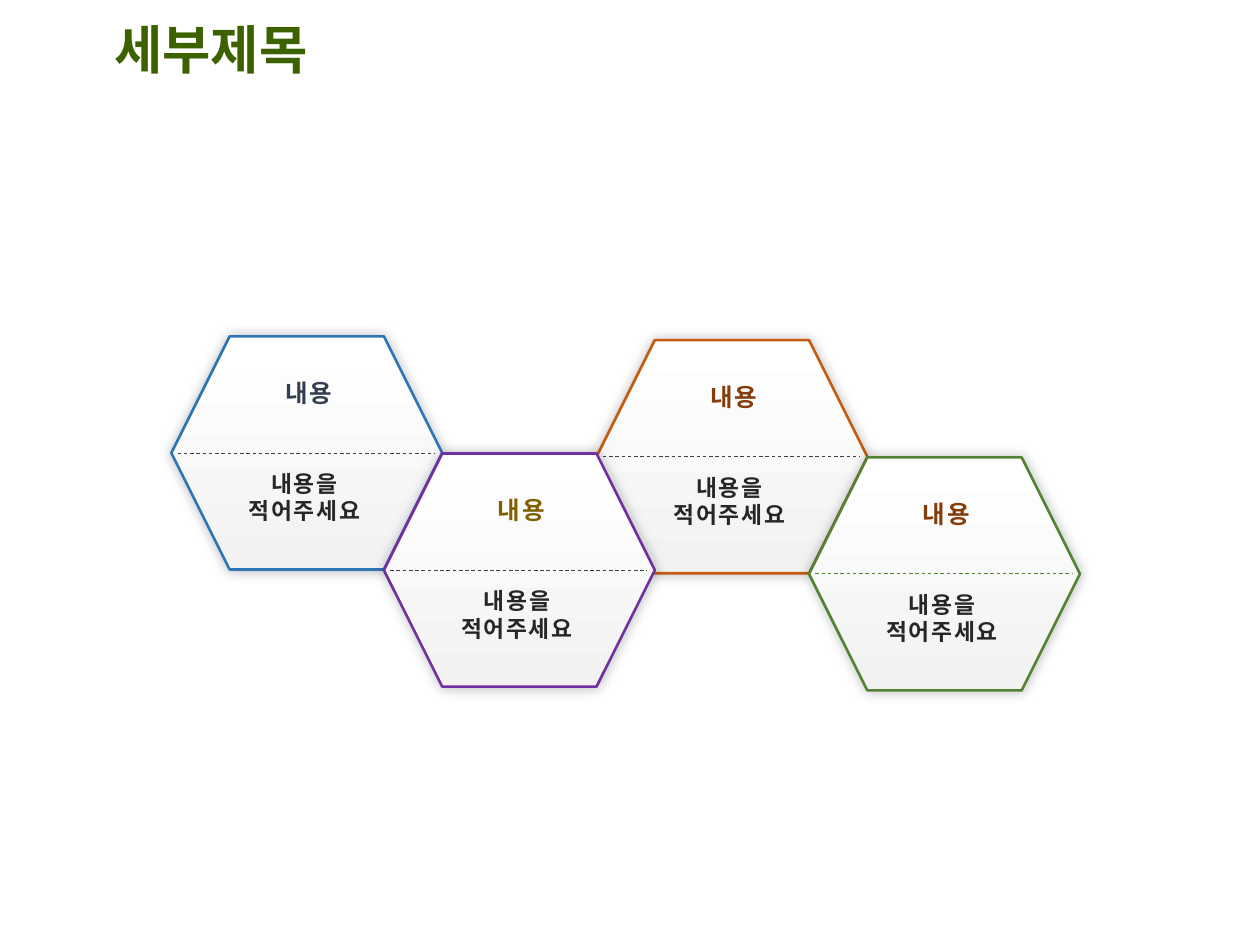
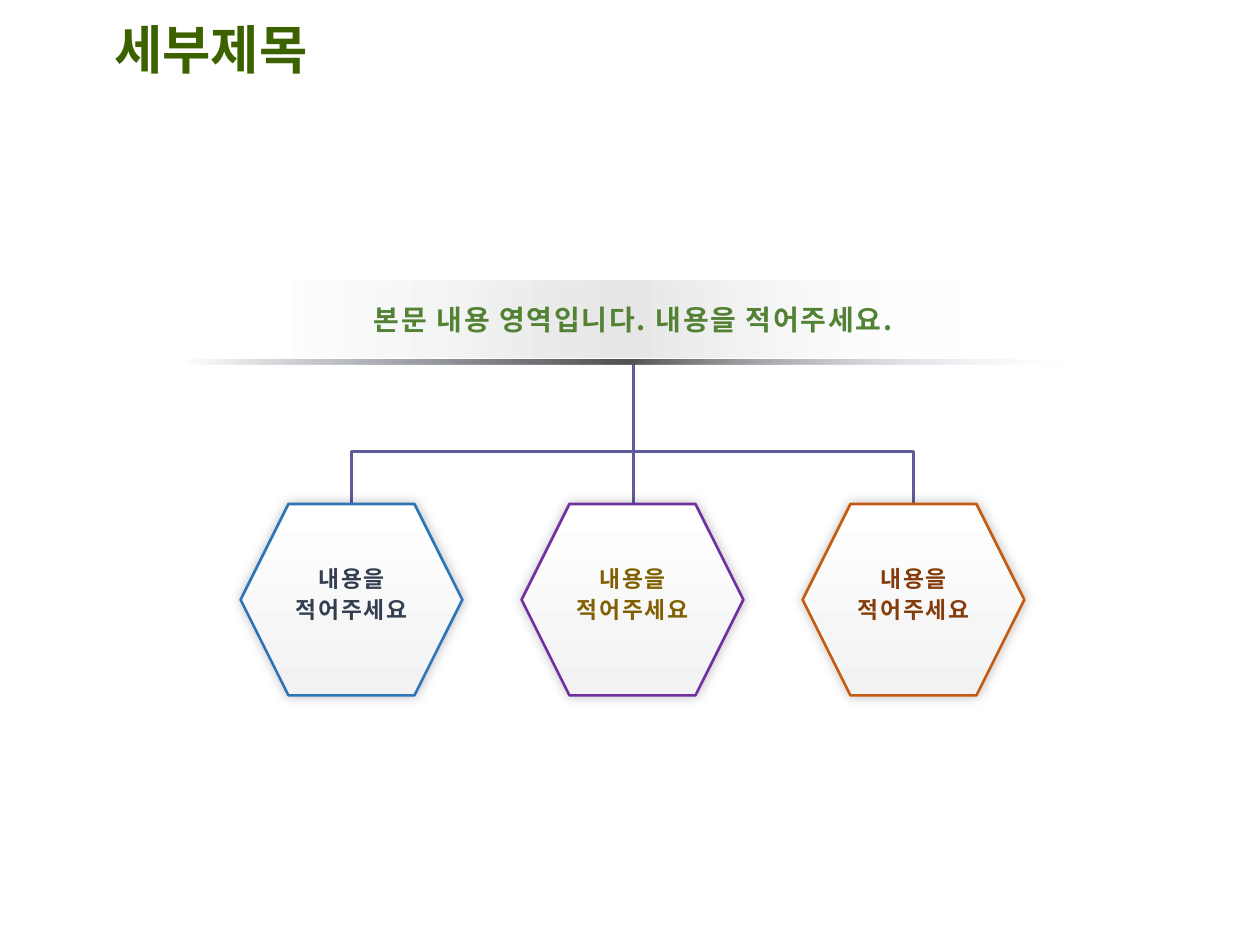
"""Build two slides of hexagon diagrams, placed by percentages of the slide's size."""
from dataclasses import dataclass

from lxml import etree
from pptx import Presentation
from pptx.dml.color import RGBColor
from pptx.enum.dml import MSO_LINE
from pptx.enum.shapes import MSO_CONNECTOR, MSO_SHAPE
from pptx.enum.text import MSO_ANCHOR, PP_ALIGN
from pptx.oxml.ns import qn
from pptx.util import Emu, Inches, Pt

HEXAGON, RECTANGLE = MSO_SHAPE.HEXAGON, MSO_SHAPE.RECTANGLE
STRAIGHT, ELBOW = MSO_CONNECTOR.STRAIGHT, MSO_CONNECTOR.ELBOW
LEFT, CENTER = PP_ALIGN.LEFT, PP_ALIGN.CENTER
TOP, MIDDLE = MSO_ANCHOR.TOP, MSO_ANCHOR.MIDDLE
DASH = MSO_LINE.DASH

SLIDE_WIDTH, SLIDE_HEIGHT = Inches(10), Inches(7.5)
HANGUL_FONT = "Noto Sans CJK KR"
BLUE, PURPLE, ORANGE, GREEN = "2E75B6", "7030A0", "C55A11", "548235"
NAVY, OLIVE, BROWN = "333F50", "806000", "843C0B"
TITLE_GREEN, INK, GRAY, TREE = "3C6200", "262626", "404040", "5E5D99"
PROMPT = ["내용을", "적어주세요"]


@dataclass(frozen=True)
class Box:
    """Place and size in percent of the slide's width and height."""
    left: float
    top: float
    width: float
    height: float

    def inner(self, left: float, top: float, width: float, height: float) -> "Box":
        """Return a box offset from this one."""
        return Box(self.left + left, self.top + top, width, height)


@dataclass(frozen=True)
class TextStyle:
    """Look of a text block."""
    size: float
    spacing: float
    font: str = HANGUL_FONT
    align: int = CENTER
    anchor: int = TOP
    tracking: int = 100


@dataclass(frozen=True)
class Stop:
    """Gradient stop, with position and opacity in percent."""
    position: int
    color: str
    opacity: int = 100


@dataclass(frozen=True)
class Cell:
    """Hexagon colours, with its grid row and shift for the honeycomb."""
    column: int
    outline: str
    ink: str
    divider: str = GRAY


TITLE = TextStyle(30, 0.9, "Calibri", LEFT, MIDDLE, 0)
LABEL = TextStyle(14, Pt(18))
BODY = TextStyle(13, Pt(15.5))
LEAF = TextStyle(13, Pt(18))
MESSAGE = TextStyle(16, Pt(19.4))

PAPER = [Stop(0, "FFFFFF"), Stop(100, "F2F2F2")]
BAND = [Stop(0, NAVY, 0), Stop(50, "000000", 10), Stop(100, "E1EBFB", 0)]
RULE = [Stop(0, NAVY, 0), Stop(50, "525252"), Stop(100, "E1EBFB", 0)]

HONEYCOMB = [
    Cell(2, ORANGE, BROWN),
    Cell(0, BLUE, NAVY),
    Cell(1, PURPLE, OLIVE),
    Cell(3, GREEN, BROWN, GREEN),
]
LEAVES = [Cell(0, BLUE, NAVY), Cell(1, PURPLE, OLIVE), Cell(2, ORANGE, BROWN)]
TRUNK_X = 50.3


def across(percent: float) -> Emu:
    """Turn percent of the slide's width into a length."""
    return Emu(round(SLIDE_WIDTH * percent / 100))


def down(percent: float) -> Emu:
    """Turn percent of the slide's height into a length."""
    return Emu(round(SLIDE_HEIGHT * percent / 100))


def frame(box: Box) -> tuple:
    """Give the lengths of a box."""
    return across(box.left), down(box.top), across(box.width), down(box.height)


def color(code: str) -> RGBColor:
    """Read a hex colour."""
    return RGBColor.from_string(code)


def add_color(parent, code: str, opacity: int) -> None:
    """Append a colour with opacity to an XML element."""
    element = etree.SubElement(parent, qn("a:srgbClr"), val=code)
    if opacity < 100:
        etree.SubElement(element, qn("a:alpha"), val=str(opacity * 1000))


def add_text(slide, box: Box, lines: list, style: TextStyle, ink: str) -> None:
    """Add a text box with one paragraph per line."""
    text_frame = slide.shapes.add_textbox(*frame(box)).text_frame
    text_frame.word_wrap = True
    text_frame.vertical_anchor = style.anchor
    font_values = {"name": style.font, "size": Pt(style.size), "bold": True}
    for index, line in enumerate(lines):
        paragraph = text_frame.paragraphs[0] if index == 0 else text_frame.add_paragraph()
        paragraph.alignment = style.align
        paragraph.line_spacing = style.spacing
        run = paragraph.add_run()
        run.text = line
        for name, value in font_values.items():
            setattr(run.font, name, value)
        run.font.color.rgb = color(ink)
        properties = run.font._element
        properties.set("spc", str(style.tracking))
        etree.SubElement(properties, qn("a:ea"), typeface=HANGUL_FONT)


def add_gradient_shape(shapes, kind: int, box: Box, stops: list, angle: int):
    """Add a shape with a gradient fill and no line or shadow."""
    shape = shapes.add_shape(kind, *frame(box))
    shape.shadow.inherit = False
    shape.line.fill.background()
    shape.fill.gradient()
    shape.fill.gradient_angle = angle
    stop_list = shape.element.spPr.find(qn("a:gradFill")).find(qn("a:gsLst"))
    for old_stop in list(stop_list):
        stop_list.remove(old_stop)
    for stop in stops:
        element = etree.SubElement(stop_list, qn("a:gs"), pos=str(stop.position * 1000))
        add_color(element, stop.color, stop.opacity)
    return shape


def add_hexagon(shapes, box: Box, outline: str) -> None:
    """Add a paper hexagon with a coloured outline and a soft glow of shadow."""
    shape = add_gradient_shape(shapes, HEXAGON, box, PAPER, 270)
    shape.line.color.rgb = color(outline)
    shape.line.width = Pt(1.5)
    effects = shape.element.spPr.find(qn("a:effectLst"))
    shadow = etree.SubElement(effects, qn("a:outerShdw"), blurRad=str(Pt(7)),
                              dist="0", dir="0", algn="ctr", rotWithShape="0")
    add_color(shadow, "000000", 25)


def add_line(shapes, kind: int, points: tuple, ink: str, width: float, dash=None):
    """Add a connector between two points given as lengths."""
    connector = shapes.add_connector(kind, *points)
    for name, value in {"width": Pt(width), "dash_style": dash}.items():
        setattr(connector.line, name, value)
    connector.line.color.rgb = color(ink)
    etree.SubElement(connector.element.spPr, qn("a:effectLst"))
    return connector


def add_branch(shapes, leaf_x: float, side: int) -> None:
    """Add an elbow that rises from a leaf and turns to the trunk."""
    start, end = down(70.13), down(38.4)
    middle_x, middle_y = across((leaf_x + TRUNK_X) / 2), (start + end) // 2
    half_rise = (start - end) // 2
    half_run = across(abs(leaf_x - TRUNK_X) / 2)
    points = (middle_x - side * half_rise, middle_y + half_run,
              middle_x + side * half_rise, middle_y - half_run)
    connector = add_line(shapes, ELBOW, points, TREE, 1.5)
    properties = connector.element.spPr
    properties.find(qn("a:xfrm")).set("rot", str((180 + side * 90) * 60000))
    geometry = properties.find(qn("a:prstGeom"))
    adjustments = geometry.find(qn("a:avLst"))
    if adjustments is None:
        adjustments = etree.SubElement(geometry, qn("a:avLst"))
    etree.SubElement(adjustments, qn("a:gd"), name="adj1", fmla="val 70500")


def add_titled_slide(presentation):
    """Add a blank slide with the shared title."""
    slide = presentation.slides.add_slide(presentation.slide_layouts[6])
    add_text(slide, Box(8.1, 1.73, 86.2, 7.6), ["세부제목"], TITLE, TITLE_GREEN)
    return slide


def build_honeycomb(presentation) -> None:
    """Build four interlocking hexagons, each split by a dashed line."""
    slide = add_titled_slide(presentation)
    for cell in HONEYCOMB:
        pair, row = divmod(cell.column, 2)
        box = Box(13.6 + 16.87 * cell.column, 35.6 + 12.4 * row + 0.4 * pair, 21.5, 24.67)
        group = slide.shapes.add_group_shape()
        add_hexagon(group.shapes, box, cell.outline)
        middle = down(box.top + box.height / 2)
        points = (across(box.left + 0.5), middle, across(box.left + 20.9), middle)
        add_line(group.shapes, STRAIGHT, points, cell.divider, 0.5, DASH)
        add_text(slide, box.inner(2.3, 3.5, 17.2, 4.53), ["내용"], LABEL, cell.ink)
        add_text(slide, box.inner(2.8, 13.5, 15.5, 7.2), PROMPT, BODY, INK)


def build_tree(presentation) -> None:
    """Build a headline that branches down to three hexagons."""
    slide = add_titled_slide(presentation)
    boxes = [Box(19.1 + 22.3 * leaf.column, 53.33, 17.6, 20.27) for leaf in LEAVES]
    for box, side in ((boxes[2], 1), (boxes[0], -1)):
        add_branch(slide.shapes, box.left + box.width / 2, side)
    trunk = (across(TRUNK_X), down(41.2), across(TRUNK_X), down(59.6))
    add_line(slide.shapes, STRAIGHT, trunk, TREE, 1.5)
    add_gradient_shape(slide.shapes, RECTANGLE, Box(22.6, 29.73, 54.2, 8.13), BAND, 0)
    for leaf, box in zip(LEAVES, boxes):
        add_hexagon(slide.shapes, box, leaf.outline)
        add_text(slide, box.inner(0.2, 5.33, 17.2, 8.13), PROMPT, LEAF, leaf.ink)
    add_gradient_shape(slide.shapes, RECTANGLE, Box(14.7, 38, 70, 0.53), RULE, 0)
    add_text(slide, Box(17.9, 31.33, 64.7, 4.93),
             ["본문 내용 영역입니다. 내용을 적어주세요."], MESSAGE, GREEN)


def main() -> None:
    """Build and save the presentation."""
    presentation = Presentation()
    presentation.slide_width, presentation.slide_height = SLIDE_WIDTH, SLIDE_HEIGHT
    build_honeycomb(presentation)
    build_tree(presentation)
    presentation.save("out.pptx")


if __name__ == "__main__":
    main()
